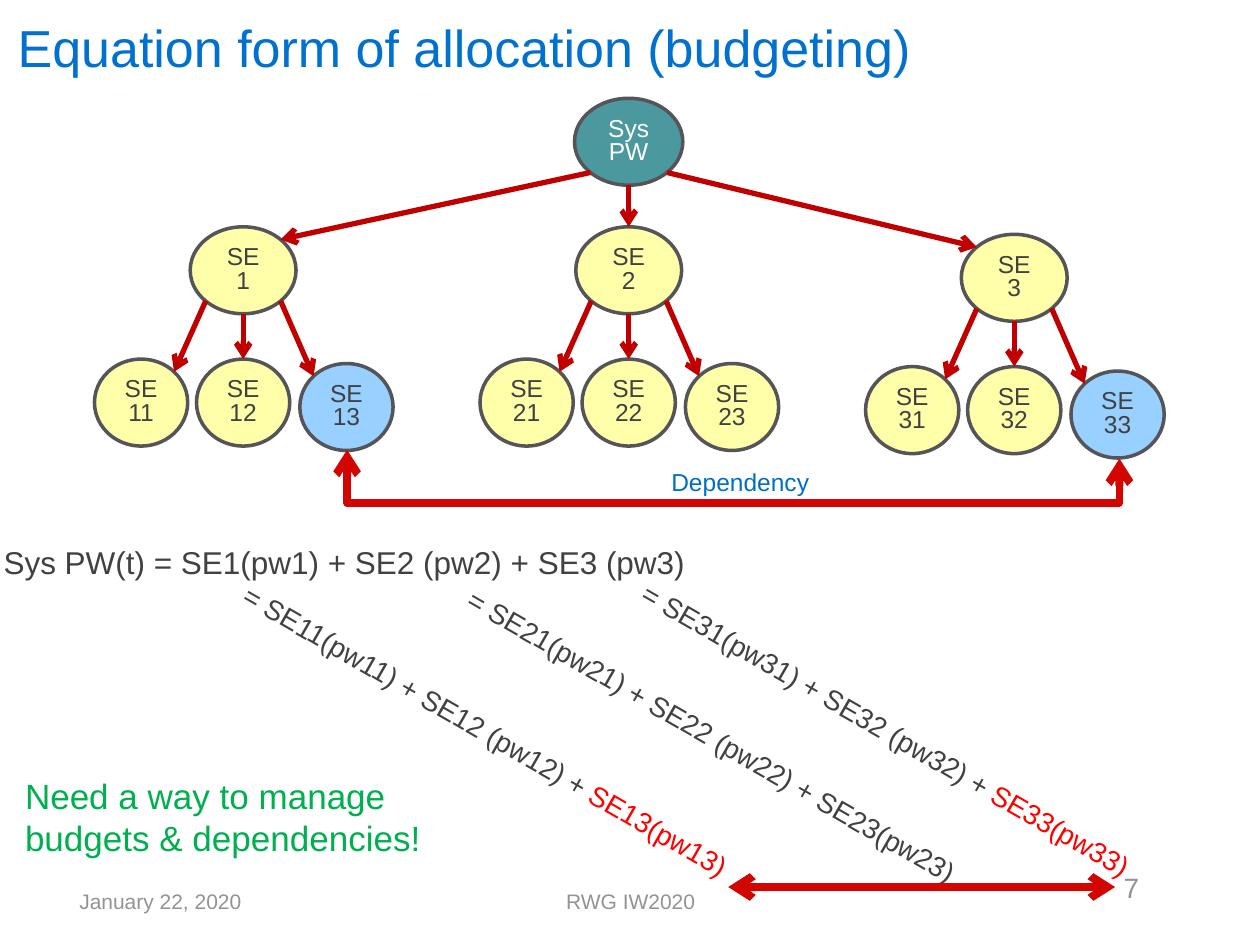
from lxml.etree import SubElement as Sub
from pptx import Presentation
from pptx.dml.color import RGBColor as RGB
from pptx.enum.shapes import MSO_CONNECTOR as CONN, MSO_SHAPE as SHAPE
from pptx.enum.text import MSO_ANCHOR as ANCHOR, PP_ALIGN as ALIGN
from pptx.oxml.ns import qn
from pptx.util import Inches, Pt

CELL = Inches(0.1)
COLS, ROWS = 100, 75
DIAG = 0.5 ** 0.5 / 2

BLUE = RGB(0x00, 0x71, 0xCE)
LINK = RGB(0x00, 0x70, 0xC0)
DARK = RGB(0x41, 0x40, 0x42)
GRAY = RGB(0x93, 0x93, 0x93)
EDGE = RGB(0x55, 0x55, 0x59)
TEAL = RGB(0x29, 0x86, 0x8D)
PALE = RGB(0xFF, 0xFF, 0x99)
SKY = RGB(0x85, 0xC8, 0xFF)
WINE = RGB(0xC0, 0x00, 0x00)
CRIMSON = RGB(0xD3, 0x05, 0x00)
RED = RGB(0xFF, 0x00, 0x00)
GREEN = RGB(0x00, 0xB0, 0x50)
WHITE = RGB(0xFF, 0xFF, 0xFF)

PAD = {"margin_left": Inches(0.13), "margin_right": Inches(0.13),
       "margin_top": Inches(0.07), "margin_bottom": Inches(0.07),
       "vertical_anchor": ANCHOR.MIDDLE}


def put(item, vals):
    for key, val in vals.items():
        setattr(item, key, val)


def cells(*nums):
    return [round(num * CELL) for num in nums]


def write(frame, runs, size, look=None, **para):
    put(frame, {"word_wrap": True, **(look or {})})
    line = frame.paragraphs[0]
    put(line, para)
    for text, tone in runs:
        run = line.add_run()
        run.text = text
        put(run.font, {"name": "Arial", "size": Pt(size)})
        run.font.color.rgb = tone


def label(slide, box, runs, size, look=None, turn=0, align=ALIGN.LEFT):
    shape = slide.shapes.add_textbox(*cells(*box))
    shape.rotation = turn
    write(shape.text_frame, runs, size, look, alignment=align)


def title(slide, text):
    shape = slide.shapes.title
    put(shape, dict(zip(("left", "top", "width", "height"),
                        cells(0.1, 1.2, 75, 5))))
    write(shape.text_frame, [(text, BLUE)], 29.7, PAD, alignment=ALIGN.LEFT)


def node(slide, mid, top, wide, text, fill, ink=DARK):
    tall = 6.9
    shape = slide.shapes.add_shape(
        SHAPE.OVAL, *cells(mid - wide / 2, top, wide, tall))
    shape.shadow.inherit = False
    shape.fill.solid()
    shape.fill.fore_color.rgb = fill
    tint = shape.fill._xPr.find(qn("a:solidFill"))[0]
    Sub(tint, qn("a:alpha"), val="84000")
    shape.line.color.rgb = EDGE
    shape.line.width = Pt(2)
    write(shape.text_frame, [(text, ink)], 14,
          {"vertical_anchor": ANCHOR.MIDDLE},
          alignment=ALIGN.CENTER, line_spacing=0.8)
    return mid, top + tall / 2, wide, tall


def rim(oval, side, down):
    x, y, wide, tall = oval
    reach = DIAG if side else 0.5
    return x + side * DIAG * wide, y + down * reach * tall


def arrow(slide, start, end, tone, width, kind=CONN.STRAIGHT, tips=("head",)):
    line = slide.shapes.add_connector(kind, *cells(*start, *end))
    line.line.color.rgb = tone
    line.line.width = Pt(width)
    stroke = line.line._get_or_add_ln()
    for tip in tips:
        Sub(stroke, qn(f"a:{tip}End"), type="arrow")
    Sub(line._element.spPr, qn("a:effectLst"))
    return line


def branch(slide, child, parent, side):
    arrow(slide, rim(child, -side, -1), rim(parent, side, 1), WINE, 3)


def tree(slide):
    root = node(slide, 49.9, 7.8, 8.6, "Sys PW", TEAL, WHITE)
    for num, drop in ((1, 0), (2, 0), (3, 0.6)):
        side = num - 2
        mid = 49.9 + 30.6 * side
        head = node(slide, mid, 18 + drop, 8.4, f"SE {num}", PALE)
        branch(slide, head, root, side)
        for leaf, shift, dip in ((1, -8.1, 0), (2, 0, 0), (3, 8.2, 0.35)):
            code = f"{num}{leaf}"
            fill = SKY if code in ("13", "33") else PALE
            text = "SE23" if code == "23" else f"SE {code}"
            kid = node(slide, mid + shift, 28.5 + drop + dip, 7.4, text, fill)
            branch(slide, kid, head, leaf - 2)


def links(slide):
    both = {"kind": CONN.ELBOW, "tips": ("head", "tail")}
    bend = arrow(slide, (57.85, 5.4), (58.55, 66.7), CRIMSON, 4.5, **both)
    place = bend._element.spPr.find(qn("a:xfrm"))
    place.set("rot", "16200000")
    place.set("flipH", "1")
    shape = bend._element.spPr.find(qn("a:prstGeom"))
    guide = shape.find(qn("a:avLst"))
    if guide is None:
        guide = Sub(shape, qn("a:avLst"))
    Sub(guide, qn("a:gd"), name="adj1", fmla="val 600000")
    label(slide, (44.9, 36.6, 27.7, 3.4), [("Dependency", LINK)], 14,
          align=ALIGN.CENTER)
    arrow(slide, (57.8, 70.4), (88.5, 70.4), CRIMSON, 4.5, **both)


def sums(slide):
    label(slide, (-0.7, 42.6, 69.3, 4),
          [("Sys PW(t) = SE1(pw1) + SE2 (pw2) + SE3 (pw3)", DARK)], 18)
    spots = ((15.1, 58.1, 53.6), (33, 58.1, 52.3), (46.8, 57.7, 52.7))
    for num, (left, top, wide) in enumerate(spots, 1):
        lead = f"= SE{num}1(pw{num}1) + SE{num}2 (pw{num}2) + "
        last = f"SE{num}3(pw{num}3)"
        runs = [(lead, DARK), (last, DARK if num == 2 else RED)]
        label(slide, (left, top, wide, 3.7), runs, 16, turn=29.9)
    label(slide, (1, 61, 39.9, 7.7),
          [("Need a way to manage budgets & dependencies!", GREEN)], 20)


def footer(slide):
    for box, text, size, align in (
            ((5, 69.5, 23.3, 4), "January 22, 2020", 12, ALIGN.LEFT),
            ((34.2, 69.5, 31.7, 4), "RWG IW2020", 12, ALIGN.CENTER),
            ((68.4, 68.4, 23.3, 4), "7", 16, ALIGN.RIGHT)):
        label(slide, box, [(text, GRAY)], size, PAD, align=align)


def main():
    deck = Presentation()
    put(deck, {"slide_width": COLS * CELL, "slide_height": ROWS * CELL})
    slide = deck.slides.add_slide(deck.slide_layouts[5])
    title(slide, "Equation form of allocation (budgeting)")
    tree(slide)
    sums(slide)
    links(slide)
    footer(slide)
    deck.save("out.pptx")


if __name__ == "__main__":
    main()
